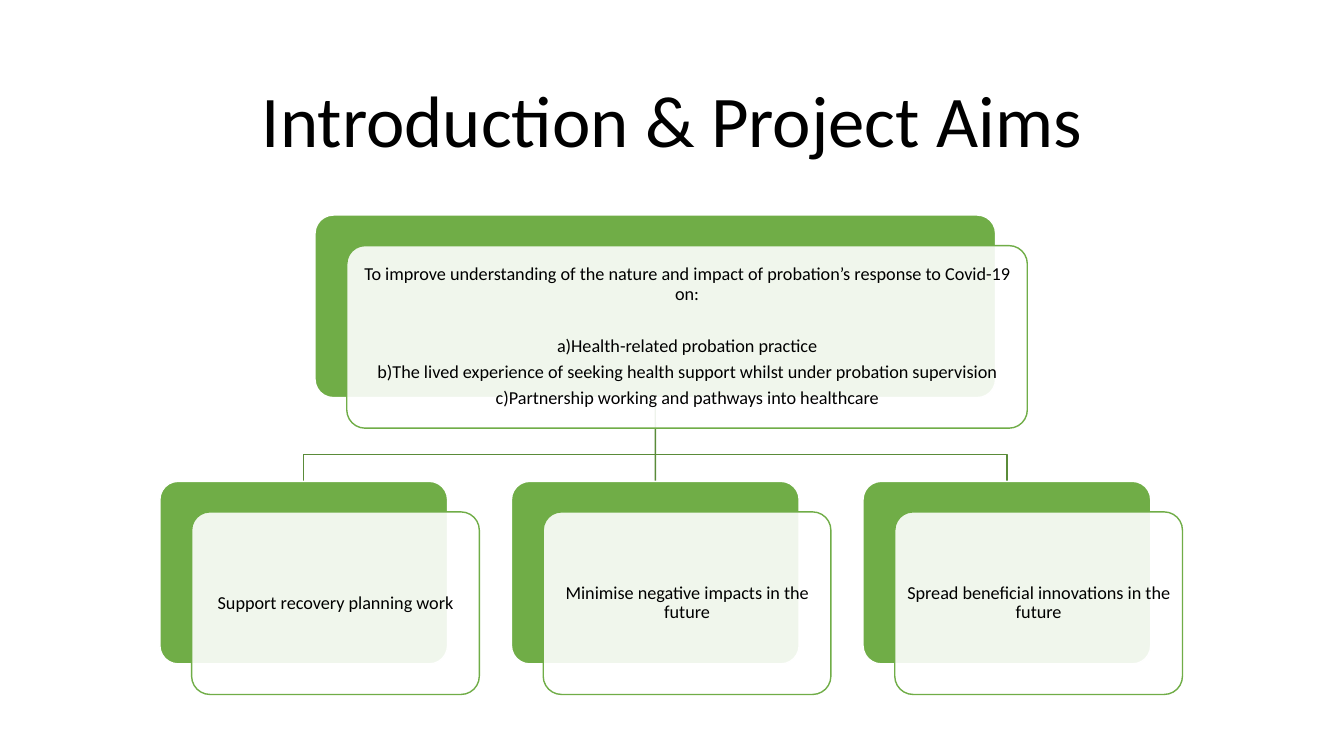
import pptx
import pptx.dml.color
import pptx.enum.shapes
import pptx.enum.text
import pptx.oxml
import pptx.oxml.ns
import pptx.util

Cm = pptx.util.Cm
Pt = pptx.util.Pt
GREEN, DARK, WHITE, BLACK = "70AD47", "5A8B39", "FFFFFF", "000000"
HEAD = "To improve understanding of the nature and impact of probation’s response to Covid-19 on:"
POINTS = [
    "Health-related probation practice",
    "The lived experience of seeking health support whilst under probation supervision",
    "Partnership working and pathways into healthcare",
]
AIMS = [
    "Support recovery planning work",
    "Minimise negative impacts in the future",
    "Spread beneficial innovations in the future",
]
MIDDLE = {"word_wrap": True, "vertical_anchor": pptx.enum.text.MSO_ANCHOR.MIDDLE}
TIGHT = {side: Cm(0.13) for side in ("margin_left", "margin_right", "margin_top", "margin_bottom")}
CENTRE = {"alignment": pptx.enum.text.PP_ALIGN.CENTER, "line_spacing": 0.9}


def color(code):
    """Turn a hex string into a colour."""
    return pptx.dml.color.RGBColor.from_string(code)


def apply(item, values):
    """Set each attribute of item from a dict."""
    for name, value in values.items():
        setattr(item, name, value)


def stroke(shape, code):
    """Give a shape a thin line."""
    shape.line.color.rgb = color(code)
    shape.line.width = Pt(1)


def write(frame, lines, size, after=0):
    """Fill a text frame with centred lines and return its paragraphs."""
    apply(frame, MIDDLE)
    for index, text in enumerate(lines):
        para = frame.add_paragraph() if index else frame.paragraphs[0]
        apply(para, {**CENTRE, "space_after": Pt(after)})
        run = para.add_run()
        apply(run, {"text": text})
        apply(run.font, {"name": "Calibri", "size": Pt(size)})
        run.font.color.rgb = color(BLACK)
    return frame.paragraphs


def letter(para):
    """Number a paragraph a), b), c)."""
    props = para._p.get_or_add_pPr()
    props.set("marL", str(Cm(0.32)))
    props.set("indent", str(-Cm(0.32)))
    number = pptx.oxml.parse_xml(
        f'<a:buAutoNum {pptx.oxml.ns.nsdecls("a")} type="alphaLcParenR"/>')
    props.append(number)


def panel(slide, box, fill, line):
    """Draw one rounded panel."""
    kind = pptx.enum.shapes.MSO_SHAPE.ROUNDED_RECTANGLE
    shape = slide.shapes.add_shape(kind, *map(Cm, box))
    shape.adjustments[0] = 0.1
    shape.shadow.inherit = False
    shape.fill.solid()
    shape.fill.fore_color.rgb = color(fill)
    stroke(shape, line)
    return shape


def card(slide, box, lines):
    """Draw a green panel with a sheer text panel over it."""
    left, top, width, height = box
    back = panel(slide, box, GREEN, WHITE)
    front = panel(slide, (left + 0.8, top + 0.77, width, height), WHITE, GREEN)
    tint = front.fill._xPr.find(".//" + pptx.oxml.ns.qn("a:srgbClr"))
    tint.append(pptx.oxml.parse_xml(
        f'<a:alpha {pptx.oxml.ns.nsdecls("a")} val="90000"/>'))
    apply(front.text_frame, TIGHT)
    return back, write(front.text_frame, lines, 13, 4.55)


def branch(slide, start, turn, end):
    """Draw a bent line from start to end, level at height turn."""
    points = [start, (start[0], turn), (end[0], turn), end]
    points = [(Cm(x), Cm(y)) for x, y in points]
    build = slide.shapes.build_freeform(*points[0], scale=1.0)
    build.add_line_segments(points[1:], close=False)
    shape = build.convert_to_shape()
    shape.shadow.inherit = False
    shape.fill.background()
    stroke(shape, DARK)


def trunk(slide):
    """Add a plain straight line, to be joined to cards later."""
    kind = pptx.enum.shapes.MSO_CONNECTOR.STRAIGHT
    line = slide.shapes.add_connector(kind, 0, 0, 0, 0)
    stroke(line, DARK)
    line._element.spPr.append(pptx.oxml.parse_xml(
        f'<a:effectLst {pptx.oxml.ns.nsdecls("a")}/>'))
    return line


def title(slide, box, text):
    """Place the slide title in its box."""
    write(slide.shapes.add_textbox(*map(Cm, box)).text_frame, [text], 52)


def tree(slide, box):
    """Place the main aim above its three branches in the box."""
    left, top, width, height = box
    tall, wide, broad = 4.6, 7.25, 17.15
    step = (width - wide) / (len(AIMS) - 1)
    low = top + height - tall
    mid = left + width / 2
    root = (mid, top + tall)
    for side in (1, -1):
        branch(slide, root, low - 0.68, (mid + side * step, low))
    line = trunk(slide)
    head, paras = card(slide, (mid - broad / 2, top, broad, tall), [HEAD] + POINTS)
    paras[0].space_after = Pt(23.4)
    for para in paras[1:]:
        letter(para)
    backs = [card(slide, (left + i * step, low, wide, tall), [aim])[0]
             for i, aim in enumerate(AIMS)]
    line.begin_connect(head, 2)
    line.end_connect(backs[1], 0)


def main():
    """Build and save the slide."""
    deck = pptx.Presentation()
    apply(deck, {"slide_width": Cm(33.87), "slide_height": Cm(19.05)})
    slide = deck.slides.add_slide(deck.slide_layouts[6])
    title(slide, (2.33, 1.55, 29.21, 3.15), "Introduction & Project Aims")
    tree(slide, (4.03, 5.42, 24.97, 11.31))
    deck.save("out.pptx")


if __name__ == "__main__":
    main()
